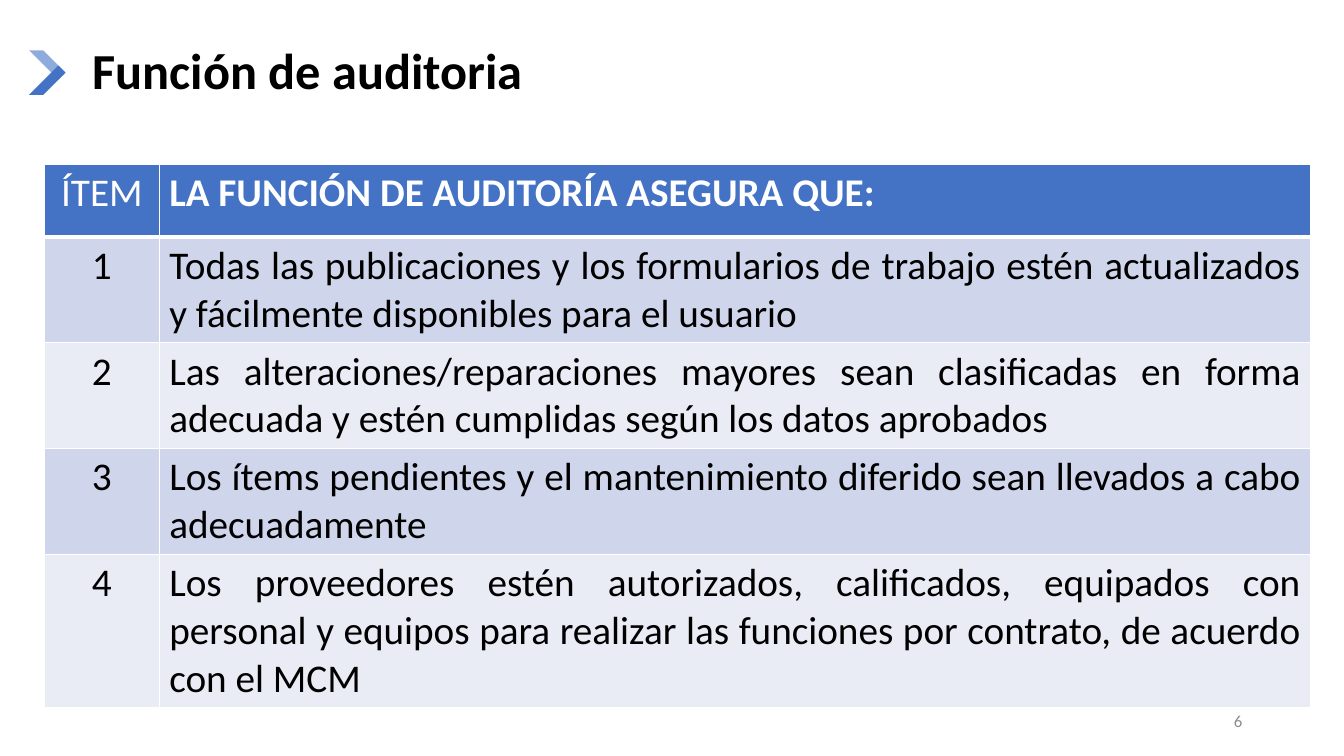
from lxml import etree
from pptx import Presentation, util as u
from pptx.dml.color import RGBColor
from pptx.enum import text
from pptx.oxml.ns import qn

C = {"light": "8FAADC", "blue": "4472C4", "black": "000000", "white": "FFFFFF",
     "grey": "8C8C8C", "odd": "CFD5EA", "even": "E9EBF5"}
W, H = 13.33, 7.5
AL = text.PP_ALIGN


def style(p, size, color, bold=False, align=AL.LEFT):
    p.alignment = align
    for r in p.runs:
        r.font.name, r.font.size, r.font.bold = "Calibri", u.Pt(size), bold
        r.font.color.rgb = RGBColor.from_string(C[color])


def text_box(s, box, content, *look):
    tf = s.shapes.add_textbox(*[u.Inches(v) for v in box]).text_frame
    tf.word_wrap = True
    tf.vertical_anchor = text.MSO_ANCHOR.MIDDLE
    tf.text = content
    style(tf.paragraphs[0], *look)
    return tf


prs = Presentation()
prs.slide_width, prs.slide_height = u.Inches(W), u.Inches(H)
s = prs.slides.add_slide(prs.slide_layouts[6])

# Chevron: two mirrored halves, in hundredths of an inch
for color, outer, inner in (("light", 50, 79), ("blue", 94, 65)):
    fb = s.shapes.build_freeform(29, outer, scale=u.Inches(0.01))
    fb.add_line_segments([(58, inner), (65, 72), (43, outer)], close=True)
    sp = fb.convert_to_shape()
    sp.shadow.inherit = False
    sp.fill.solid()
    sp.fill.fore_color.rgb = RGBColor.from_string(C[color])
    sp.line.fill.background()

# Title and slide number
tf = text_box(s, (0.82, 0.3, 11.59, 0.85), "Función de auditoria", 36, "black", True)
tf.paragraphs[0].line_spacing = 0.9
text_box(s, (9.42, 6.95, 3, 0.4), "6", 12, "grey", False, AL.RIGHT)

# Table: header, then numbered items
items = [
    "Todas las publicaciones y los formularios de trabajo estén actualizados y fácilmente disponibles para el usuario",
    "Las alteraciones/reparaciones mayores sean clasificadas en forma adecuada y estén cumplidas según los datos aprobados",
    "Los ítems pendientes y el mantenimiento diferido sean llevados a cabo adecuadamente",
    "Los proveedores estén autorizados, calificados, equipados con personal y equipos para realizar las funciones por contrato, de acuerdo con el MCM",
]
rows = [("ÍTEM", "LA FUNCIÓN DE AUDITORÍA ASEGURA QUE:")]
rows += [(str(n), item) for n, item in enumerate(items, 1)]
heights = [0.72, 1.05, 1.05, 1.05, 1.52]
widths = [1.14, 11.42]
tbl = s.shapes.add_table(len(rows), len(widths), u.Inches(0.44), u.Inches(1.63),
                         u.Inches(sum(widths)), u.Inches(sum(heights))).table
for col, width in zip(tbl.columns, widths):
    col.width = u.Inches(width)

for i, row in enumerate(rows):
    tbl.rows[i].height = u.Inches(heights[i])
    fill = "blue" if i == 0 else "odd" if i % 2 else "even"
    for j, content in enumerate(row):
        cell = tbl.cell(i, j)
        cell.fill.solid()
        cell.fill.fore_color.rgb = RGBColor.from_string(C[fill])
        cell.text_frame.text = content
        style(cell.text_frame.paragraphs[0], 28, "black" if i else "white",
              i == 0 and j == 1, AL.JUSTIFY if j else AL.CENTER)
        # White borders, thicker between header and items
        tcPr = cell._tc.get_or_add_tcPr()
        for k, side in enumerate(("lnL", "lnR", "lnT", "lnB")):
            thick = (i, side) in ((0, "lnB"), (1, "lnT"))
            ln = etree.Element(qn("a:" + side), w=str(u.Pt(3 if thick else 1)))
            solid = etree.SubElement(ln, qn("a:solidFill"))
            etree.SubElement(solid, qn("a:srgbClr"), val=C["white"])
            tcPr.insert(k, ln)

prs.save("out.pptx")
